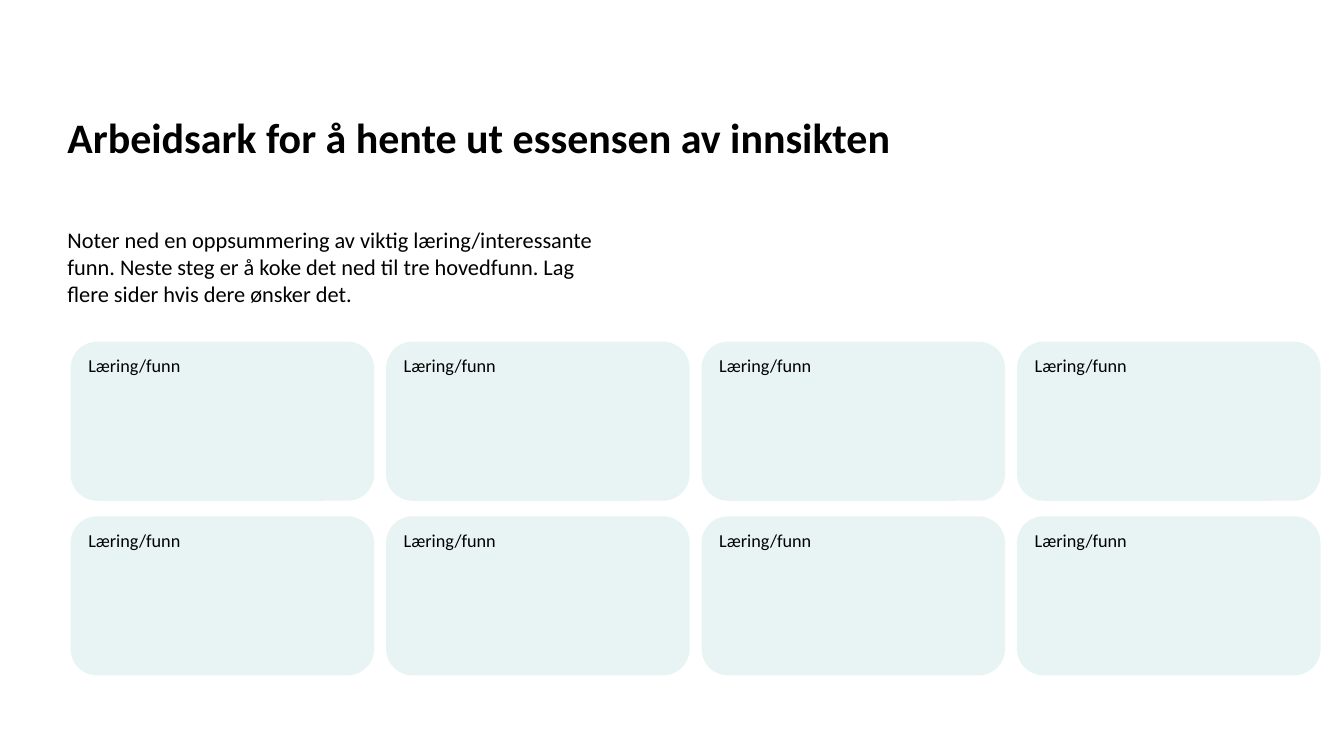
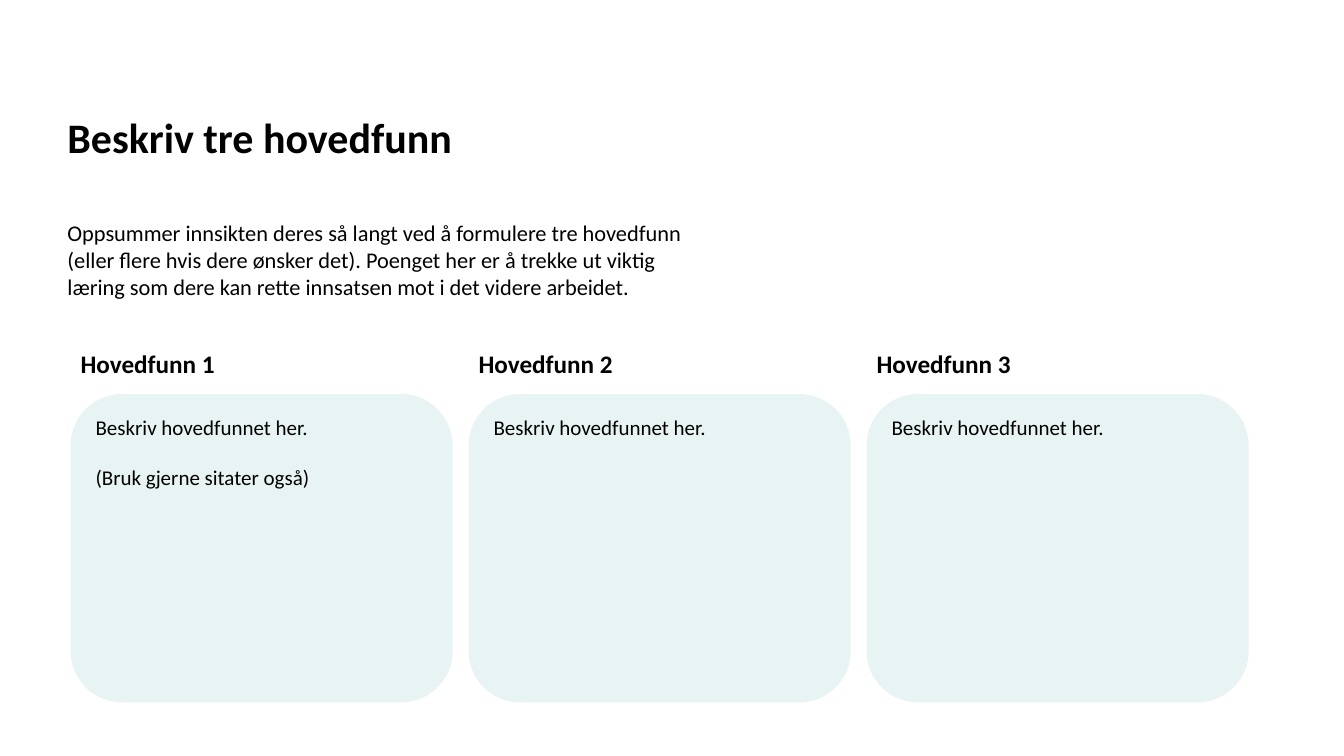
from dataclasses import dataclass

from lxml import etree
from pptx import Presentation
from pptx.dml.color import RGBColor
from pptx.enum import shapes, text
from pptx.oxml import ns
from pptx.util import Cm, Pt


@dataclass(frozen=True)
class Theme:
    font: str = "Calibri"
    ink: RGBColor = RGBColor(0, 0, 0)
    card: RGBColor = RGBColor(0x47, 0xAA, 0xA2)
    card_alpha: int = 12  # percent opaque
    title: int = 30
    heading: int = 18
    intro: int = 16
    finding: int = 15
    learning: int = 13


THEME = Theme()
FRAME = {
    "word_wrap": True,
    "auto_size": text.MSO_AUTO_SIZE.NONE,
    "margin_left": Cm(0.25),
    "margin_right": Cm(0.25),
    "margin_top": Cm(0.13),
    "margin_bottom": Cm(0.13),
}
LEFT = 1.45       # left edge of title and intro, cm
GRID_LEFT = 1.78  # left edge of the cards, cm


def apply(target, values):
    for name, value in values.items():
        setattr(target, name, value)


def write(sp, lines, size, bold=False, anchor=text.MSO_ANCHOR.TOP,
          gap=0, line_spacing=1.0):
    """Fill a shape with left-aligned paragraphs, gap points apart."""
    tf = sp.text_frame
    apply(tf, {**FRAME, "vertical_anchor": anchor})
    for i, line in enumerate(lines):
        p = tf.paragraphs[0] if i == 0 else tf.add_paragraph()
        apply(p, {"alignment": text.PP_ALIGN.LEFT,
                  "line_spacing": line_spacing,
                  "space_before": Pt(gap if i else 0)})
        r = p.add_run()
        r.text = line
        apply(r.font, {"name": THEME.font, "size": Pt(size), "bold": bold})
        r.font.color.rgb = THEME.ink


def add_titled_slide(prs, title):
    s = prs.slides.add_slide(prs.slide_layouts[5])
    sp = s.shapes.title
    apply(sp, {"left": Cm(LEFT), "top": Cm(0.86),
               "width": Cm(22.1), "height": Cm(3.38)})
    write(sp, [title], THEME.title, bold=True,
          anchor=text.MSO_ANCHOR.BOTTOM, line_spacing=0.9)
    return s


def add_text(s, box, line, size, bold=False):
    sp = s.shapes.add_textbox(*map(Cm, box))
    write(sp, [line], size, bold)


def add_card(s, box, lines, size):
    """Rounded, translucent card to write in."""
    sp = s.shapes.add_shape(shapes.MSO_SHAPE.ROUNDED_RECTANGLE, *map(Cm, box))
    sp.shadow.inherit = False
    sp.line.fill.background()
    sp.fill.solid()
    sp.fill.fore_color.rgb = THEME.card
    color = sp.fill._xPr.find(ns.qn("a:solidFill"))[0]
    alpha = etree.SubElement(color, ns.qn("a:alpha"))
    alpha.set("val", str(THEME.card_alpha * 1000))
    write(sp, lines, size, gap=size * 1.2)


def build_worksheet(prs):
    s = add_titled_slide(prs, "Arbeidsark for å hente ut essensen av innsikten")
    add_text(s, (LEFT, 5.57, 13.79, 2.51),
             "Noter ned en oppsummering av viktig læring/interessante funn. "
             "Neste steg er å koke det ned til tre hovedfunn. "
             "Lag flere sider hvis dere ønsker det.", THEME.intro)
    # Grid of two rows with four cards
    for row in range(2):
        for col in range(4):
            box = (GRID_LEFT + col * 7.95, 8.61 + row * 4.4, 7.65, 4.01)
            add_card(s, box, ["Læring/funn"], THEME.learning)


def build_findings(prs):
    s = add_titled_slide(prs, "Beskriv tre hovedfunn")
    add_text(s, (LEFT, 5.39, 16.28, 2.44),
             "Oppsummer innsikten deres så langt ved å formulere tre hovedfunn "
             "(eller flere hvis dere ønsker det). Poenget her er å trekke ut "
             "viktig læring som dere kan rette innsatsen mot i det videre "
             "arbeidet.", THEME.intro)
    # Three columns, each a heading above a card
    prompt = "Beskriv hovedfunnet her."
    columns = [[prompt, "(Bruk gjerne sitater også)"], [prompt], [prompt]]
    for i, lines in enumerate(columns):
        left = GRID_LEFT + i * 10.03
        add_card(s, (left, 9.93, 9.63, 7.77), lines, THEME.finding)
        add_text(s, (left, 8.64, 5.77, 0.84), f"Hovedfunn {i + 1}",
                 THEME.heading, bold=True)


def main():
    prs = Presentation()
    apply(prs, {"slide_width": Cm(33.87), "slide_height": Cm(19.05)})
    build_worksheet(prs)
    build_findings(prs)
    prs.save("out.pptx")


if __name__ == "__main__":
    main()
